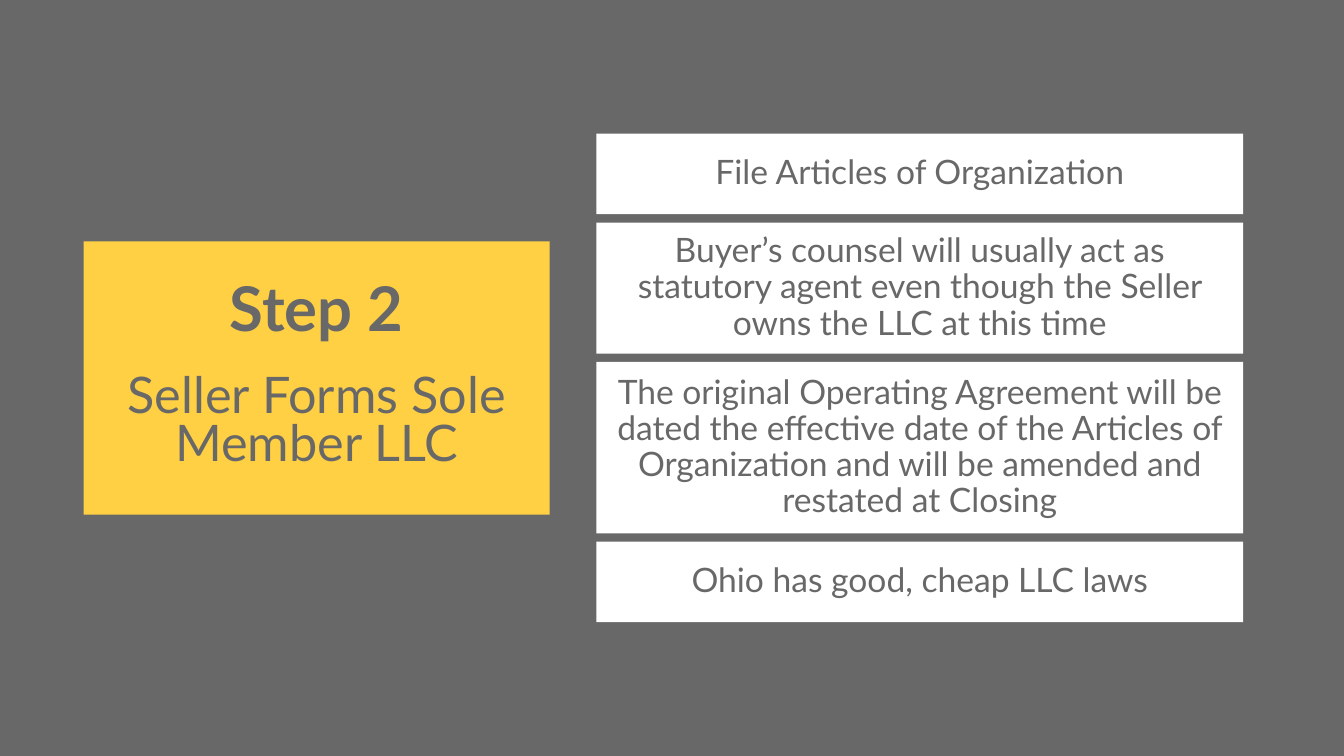
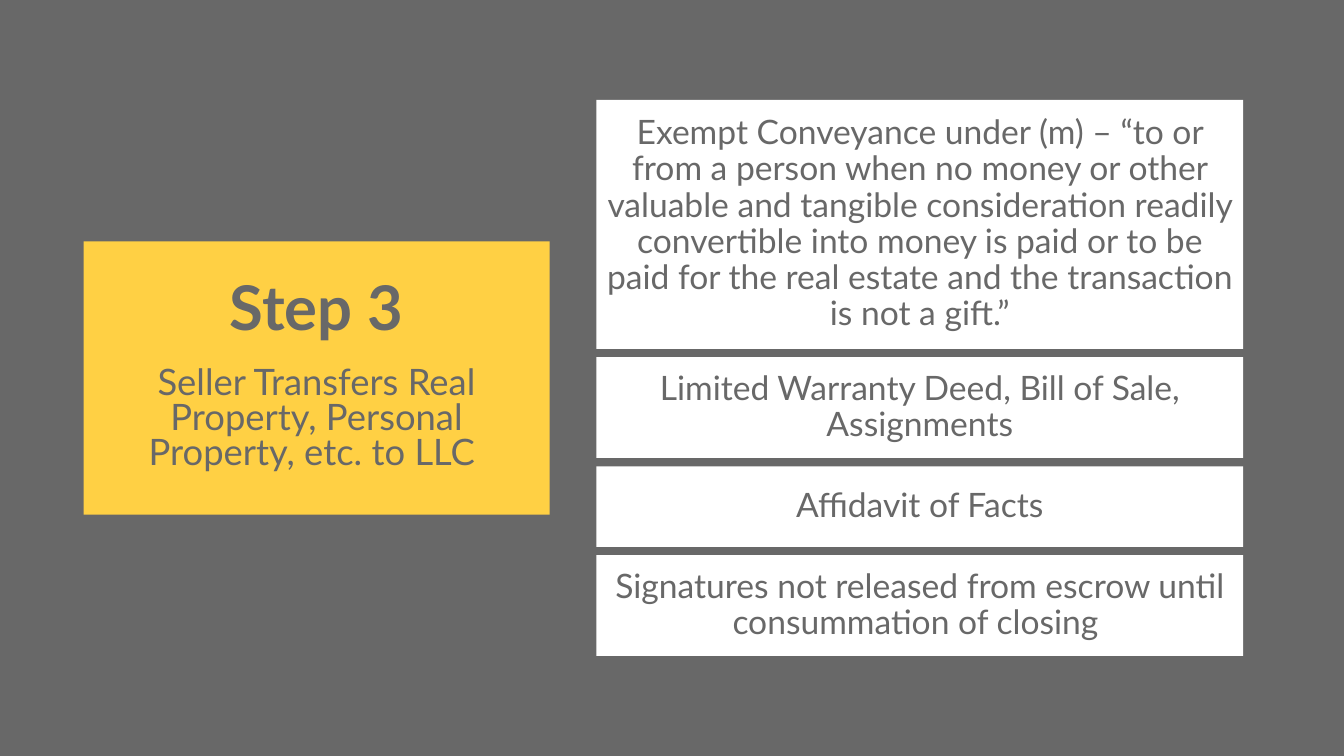
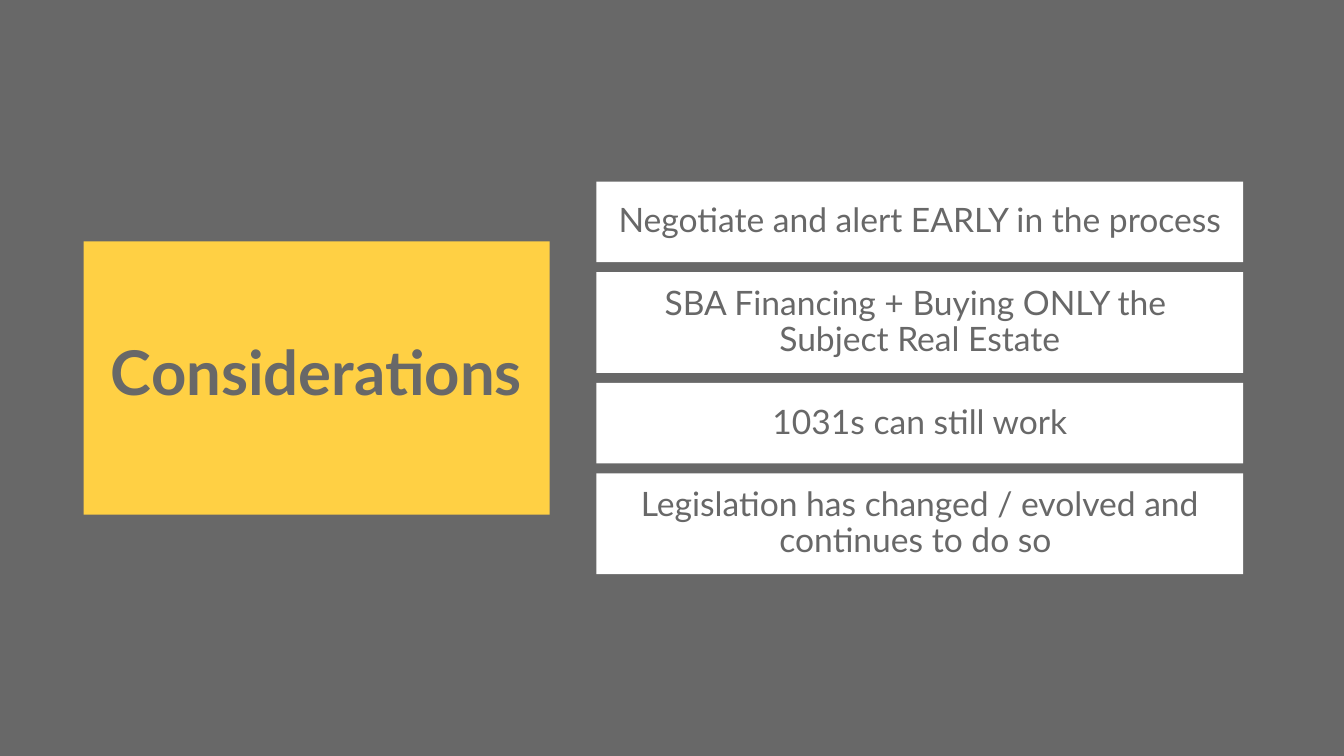
from pptx import Presentation
from pptx import util as u
from pptx.dml import color
from pptx.enum import shapes, text

GREY, YELLOW, WHITE = "686868", "FFD044", "FFFFFF"
SLIDE_W, SLIDE_H = 33.87, 19.05


def rgb(value):
    """Turn a hex string into a colour."""
    return color.RGBColor.from_string(value)


class Deck:
    """Holds the shared style and the current slide."""

    font = "Lato"

    def __init__(self):
        """Set the slide size and the common background."""
        self.prs = Presentation()
        self.prs.slide_width = u.Cm(SLIDE_W)
        self.prs.slide_height = u.Cm(SLIDE_H)
        fill = self.prs.slide_master.background.fill
        fill.solid()
        fill.fore_color.rgb = rgb(GREY)
        self.slide = None

    def new_slide(self):
        """Start a slide that has a title only."""
        self.slide = self.prs.slides.add_slide(self.prs.slide_layouts[5])

    def frame(self, sp, fill):
        """Fill a shape and prepare its text frame."""
        sp.fill.solid()
        sp.fill.fore_color.rgb = rgb(fill)
        sp.line.fill.background()
        tf = sp.text_frame
        tf.word_wrap = True
        tf.auto_size = text.MSO_AUTO_SIZE.NONE
        tf.vertical_anchor = text.MSO_ANCHOR.MIDDLE
        tf.margin_left = tf.margin_right = u.Cm(0.25)
        tf.margin_top = tf.margin_bottom = u.Cm(0.13)
        return tf

    def set_text(self, p, words, size, spacing, bold=False):
        """Set and format one centred paragraph."""
        p.text = words
        p.alignment = text.PP_ALIGN.CENTER
        p.line_spacing = spacing
        for r in p.runs:
            r.font.name = self.font
            r.font.size = u.Pt(size)
            r.font.bold = bold
            r.font.color.rgb = rgb(GREY)

    def panel(self, heading, subtitle=None, size=36, gap=0):
        """Place the title panel with an optional subtitle."""
        sp = self.slide.shapes.title
        sp.left, sp.top = u.Cm(2.11), u.Cm(6.08)
        sp.width, sp.height = u.Cm(11.74), u.Cm(6.89)
        tf = self.frame(sp, YELLOW)
        self.set_text(tf.paragraphs[0], heading, 44, 0.8, True)
        if subtitle:
            p = tf.add_paragraph()
            self.set_text(p, subtitle, size, 0.8)
            p.space_before = u.Pt(gap)

    def box(self, words, top, height):
        """Draw one white text box of the stack."""
        sp = self.slide.shapes.add_shape(
            shapes.MSO_SHAPE.RECTANGLE,
            u.Cm(15.03), u.Cm(top), u.Cm(16.3), u.Cm(height))
        sp.shadow.inherit = False
        self.set_text(self.frame(sp, WHITE).paragraphs[0], words, 24, 0.9)

    def stack(self, items, gap):
        """Stack boxes with equal gaps around the slide's middle."""
        total = sum(height for height, _ in items) + gap * (len(items) - 1)
        top = (SLIDE_H - total) / 2
        for height, words in items:
            self.box(words, top, height)
            top += height + gap


SLIDES = [
    (("Step 2", "Seller Forms Sole Member LLC", 36, 22), 0.21, [
        (2.03, "File Articles of Organization"),
        (3.3, "Buyer’s counsel will usually act as statutory agent even "
              "though the Seller owns the LLC at this time"),
        (4.32, "The original Operating Agreement will be dated the effective "
               "date of the Articles of Organization and will be amended and "
               "restated at Closing"),
        (2.03, "Ohio has good, cheap LLC laws"),
    ]),
    (("Step 3", "Seller Transfers Real Property, Personal Property, "
                "etc. to LLC ", 26, 18), 0.21, [
        (6.27, "Exempt Conveyance under (m) – “to or from a person when no "
               "money or other valuable and tangible consideration readily "
               "convertible into money is paid or to be paid for the real "
               "estate and the transaction is not a gift.”"),
        (2.54, "Limited Warranty Deed, Bill of Sale, Assignments"),
        (2.03, "Affidavit of Facts"),
        (2.54, "Signatures not released from escrow until consummation of "
               "closing "),
    ]),
    (("Considerations",), 0.25, [
        (2.03, "Negotiate and alert EARLY in the process"),
        (2.54, "SBA Financing + Buying ONLY the \vSubject Real Estate"),
        (2.03, "1031s can still work"),
        (2.54, "Legislation has changed / evolved and continues to do so "),
    ]),
]


def main():
    """Build and save the slides."""
    deck = Deck()
    for heading, gap, items in SLIDES:
        deck.new_slide()
        deck.panel(*heading)
        deck.stack(items, gap)
    deck.prs.save("out.pptx")


if __name__ == "__main__":
    main()
